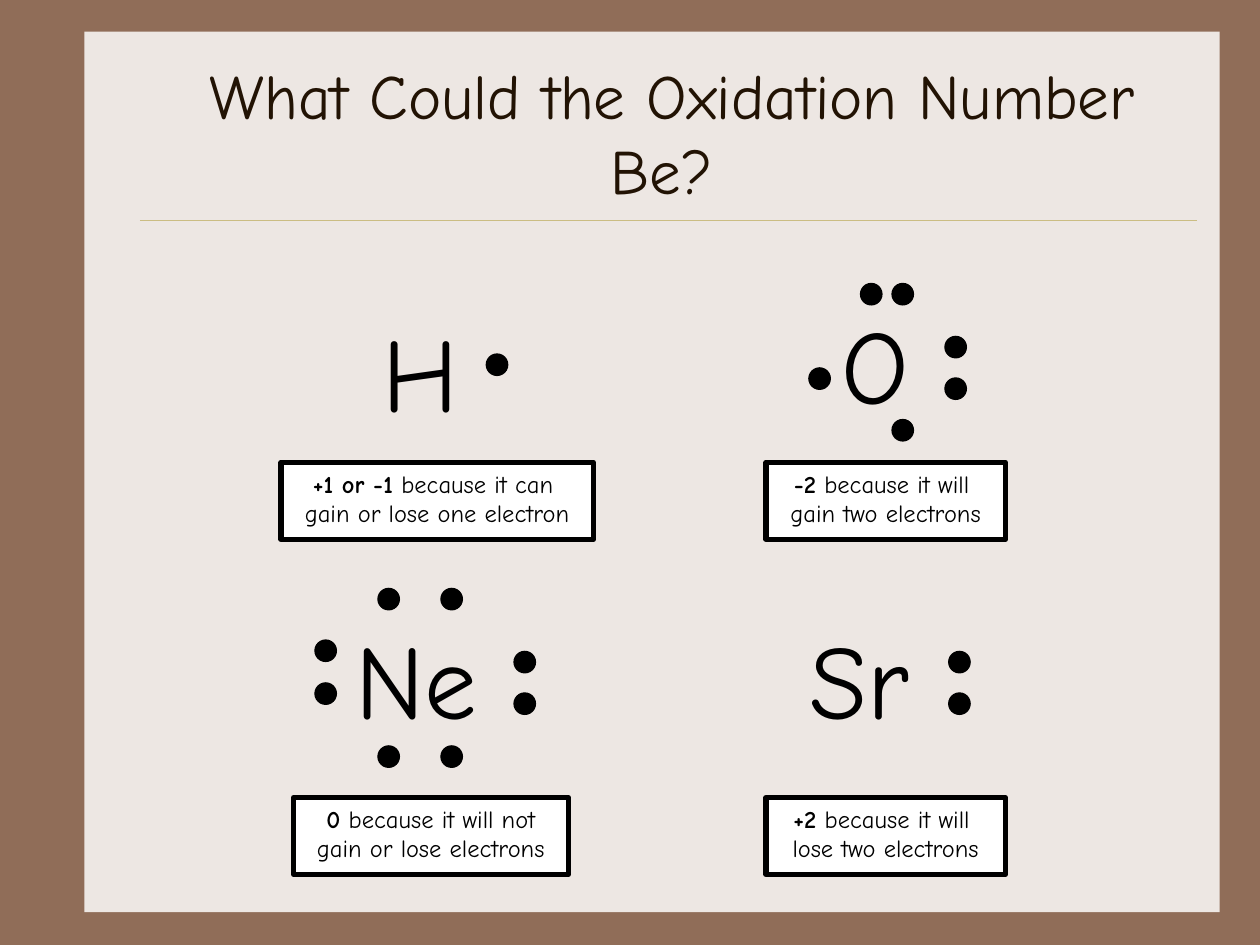
import pptx
import pptx.dml.color
import pptx.enum.shapes
import pptx.enum.text
import pptx.oxml.ns
import pptx.util
from lxml import etree
from pptx.util import Inches

COLORS = {"frame": "906D58", "paper": "EDE7E3", "rule": "CBBD83",
          "title": "221304", "ink": "000000", "white": "FFFFFF"}
SHAPE = pptx.enum.shapes.MSO_SHAPE
CENTER = pptx.enum.text.PP_ALIGN.CENTER
DOT = 0.17


def rgb(name):
    return pptx.dml.color.RGBColor.from_string(COLORS[name])


def add_run(p, text, size, color="ink", bold=False):
    r = p.add_run()
    r.text = text
    r.font.name = "Comic Neue"
    r.font.size = pptx.util.Pt(size)
    r.font.bold = bold
    r.font.color.rgb = rgb(color)


prs = pptx.Presentation()
prs.slide_width, prs.slide_height = Inches(10), Inches(7.5)
s = prs.slides.add_slide(prs.slide_layouts[6])

# Background and paper panel
s.background.fill.solid()
s.background.fill.fore_color.rgb = rgb("frame")
sp = s.shapes.add_shape(SHAPE.RECTANGLE, Inches(0.67), Inches(0.25),
                        Inches(9.01), Inches(6.99))
sp.shadow.inherit = False
sp.fill.solid()
sp.fill.fore_color.rgb = rgb("paper")
sp.line.fill.background()

# Title and rule
rule = s.shapes.add_connector(pptx.enum.shapes.MSO_CONNECTOR.STRAIGHT,
                              Inches(1.11), Inches(1.75), Inches(9.5), Inches(1.75))
rule.line.color.rgb = rgb("rule")
rule.line.width = pptx.util.Pt(0.25)
etree.SubElement(rule._element.spPr, pptx.oxml.ns.qn("a:effectLst"))

tf = s.shapes.add_textbox(Inches(1.17), Inches(0.42), Inches(8.33), Inches(1.25)).text_frame
tf.word_wrap = True
tf.vertical_anchor = pptx.enum.text.MSO_ANCHOR.MIDDLE
p = tf.paragraphs[0]
p.alignment = CENTER
add_run(p, "What Could the Oxidation Number Be? ", 36, "title")

# Electron dot diagrams: symbol, left, top, width, dot corners
atoms = [
    ("H", 2.94, 2.39, 0.84, [(3.86, 2.81)]),
    ("O", 6.58, 2.33, 0.87, [(7.5, 2.67), (7.08, 2.25), (6.42, 2.92),
                             (7.08, 3.33), (7.5, 3), (6.83, 2.25)]),
    ("Ne", 2.72, 4.83, 1.32, [(4.08, 5.17), (3, 4.67), (2.5, 5.42), (3.5, 5.92),
                              (4.08, 5.5), (3.5, 4.67), (2.5, 5.08), (3, 5.92)]),
    ("Sr", 6.33, 4.83, 1.18, [(7.53, 5.5), (7.53, 5.17)]),
]
for symbol, left, top, width, dots in atoms:
    group = s.shapes.add_group_shape()
    tf = group.shapes.add_textbox(Inches(left), Inches(top),
                                  Inches(width), Inches(1.1)).text_frame
    tf.word_wrap = False
    tf.auto_size = pptx.enum.text.MSO_AUTO_SIZE.SHAPE_TO_FIT_TEXT
    add_run(tf.paragraphs[0], symbol, 60)
    for x, y in dots:
        sp = group.shapes.add_shape(SHAPE.OVAL, Inches(x), Inches(y),
                                    Inches(DOT), Inches(DOT))
        sp.shadow.inherit = False
        sp.fill.solid()
        sp.fill.fore_color.rgb = rgb("ink")
        sp.line.color.rgb = rgb("ink")
        sp.line.width = pptx.util.Pt(0.75)

# Answer boxes: left, top, width, oxidation number, rest of line 1, line 2
answers = [
    (2.23, 3.67, 2.48, "+1 or -1", " because it can ", "gain or lose one electron"),
    (6.08, 3.67, 1.9, "-2", " because it will ", "gain two electrons"),
    (2.33, 6.33, 2.18, "0", " because it will not", "gain or lose electrons"),
    (6.08, 6.33, 1.9, "+2", " because it will ", "lose two electrons"),
]
for left, top, width, number, reason, action in answers:
    sp = s.shapes.add_shape(SHAPE.RECTANGLE, Inches(left), Inches(top),
                            Inches(width), Inches(0.61))
    sp.shadow.inherit = False
    sp.fill.solid()
    sp.fill.fore_color.rgb = rgb("white")
    sp.line.color.rgb = rgb("ink")
    sp.line.width = pptx.util.Pt(3)
    tf = sp.text_frame
    tf.word_wrap = False
    tf.auto_size = pptx.enum.text.MSO_AUTO_SIZE.SHAPE_TO_FIT_TEXT
    tf.vertical_anchor = pptx.enum.text.MSO_ANCHOR.TOP
    p = tf.paragraphs[0]
    p.alignment = CENTER
    add_run(p, number, 14, bold=True)
    add_run(p, reason, 14)
    p = tf.add_paragraph()
    p.alignment = CENTER
    add_run(p, action, 14)

prs.save("out.pptx")
